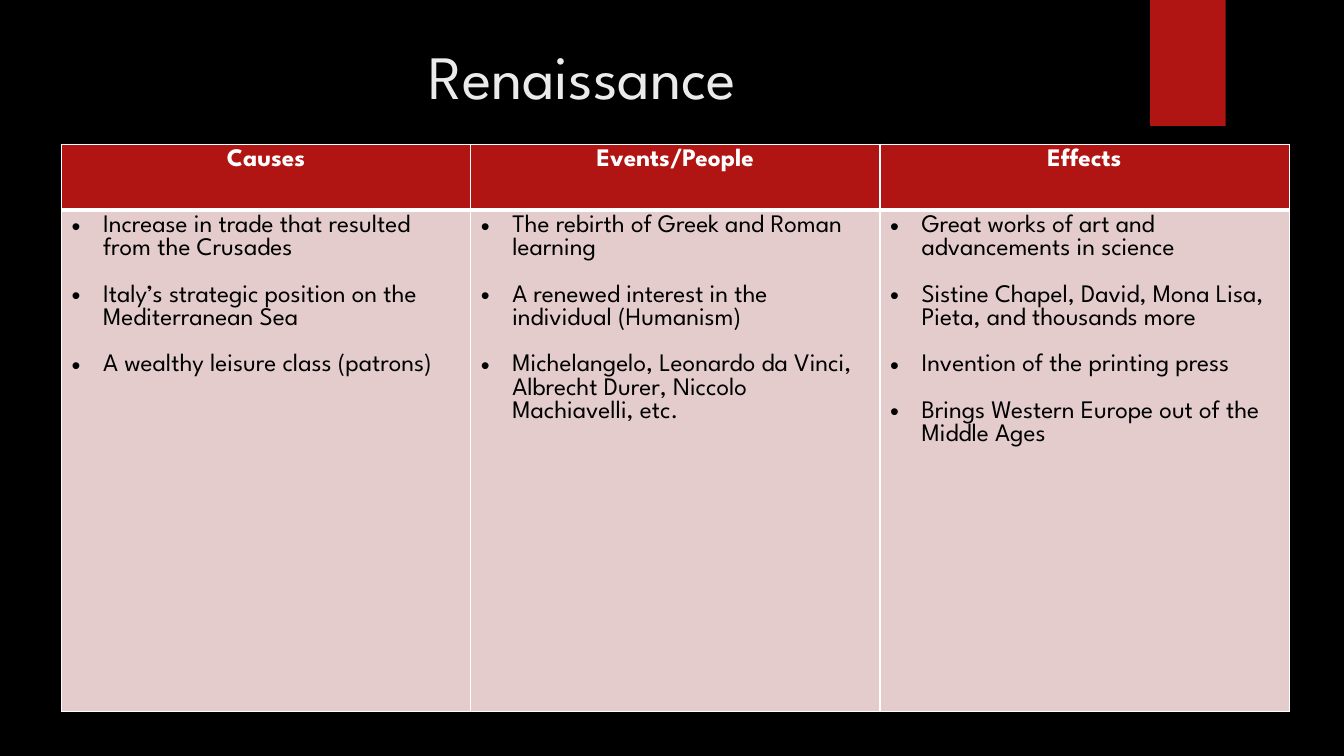
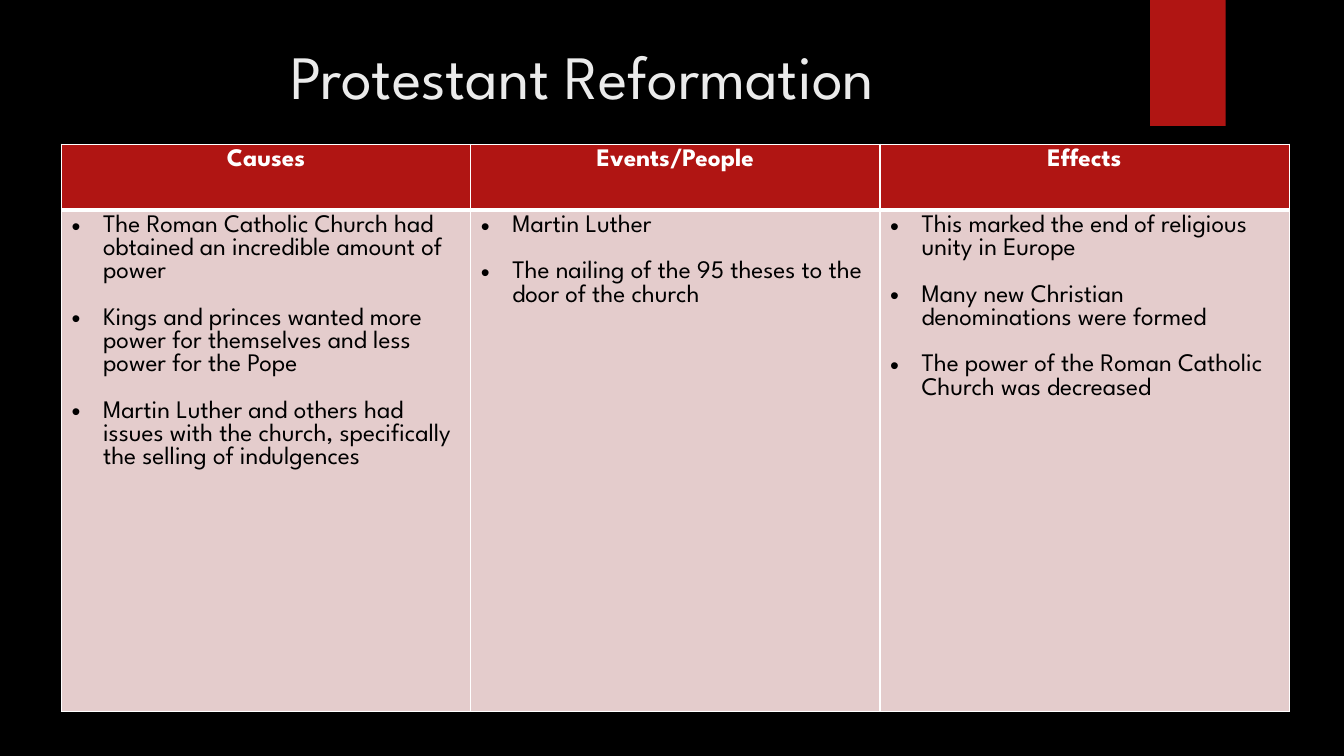
import pptx
import pptx.dml.color
import pptx.enum.shapes
import pptx.enum.text
import pptx.oxml
import pptx.oxml.ns
import pptx.util

Pt = pptx.util.Pt
ALIGN = pptx.enum.text.PP_ALIGN
FONT = "League Spartan"
BLACK, RED, PINK, WHITE, PALE = "000000", "B01513", "E4CCCC", "FFFFFF", "EBEBEB"
HEADINGS = ["Causes", "Events/People", "Effects"]
TABLE_LEFT, TABLE_TOP, TABLE_WIDTH = 43.9, 103, 877
ROW_HEIGHTS = [46.8, 358.6]
BULLET_INDENT = 22.5
BULLET_GAP = 16.6

SLIDES = [
    ("Renaissance ", [
        ["Increase in trade that resulted from the Crusades",
         "Italy’s strategic position on the Mediterranean Sea",
         "A wealthy leisure class (patrons)"],
        ["The rebirth of Greek and Roman learning",
         "A renewed interest in the individual (Humanism)",
         "Michelangelo, Leonardo da Vinci, Albrecht Durer, Niccolo Machiavelli, etc."],
        ["Great works of art and advancements in science",
         "Sistine Chapel, David, Mona Lisa, Pieta, and thousands more",
         "Invention of the printing press",
         "Brings Western Europe out of the Middle Ages"],
    ]),
    ("Protestant Reformation ", [
        ["The Roman Catholic Church had obtained an incredible amount of power",
         "Kings and princes wanted more power for themselves and less power for the Pope",
         "Martin Luther and others had issues with the church, "
         "specifically the selling of indulgences"],
        ["Martin Luther",
         "The nailing of the 95 theses to the door of the church"],
        ["This marked the end of religious unity in Europe",
         "Many new Christian denominations were formed",
         "The power of the Roman Catholic Church was decreased"],
    ]),
]


def rgb(color):
    """Turn a hex string into a colour."""
    return pptx.dml.color.RGBColor.from_string(color)


def paint(fill, color):
    """Give a fill one solid colour."""
    fill.solid()
    fill.fore_color.rgb = rgb(color)


def add_run(p, text, size, color, bold=False):
    """Add a styled run to a paragraph."""
    r = p.add_run()
    r.text = text
    r.font.name = FONT
    r.font.size = Pt(size)
    r.font.bold = bold
    r.font.color.rgb = rgb(color)


def add_band(s):
    """Add the red band at the top of the slide."""
    sp = s.shapes.add_shape(pptx.enum.shapes.MSO_SHAPE.RECTANGLE,
                            Pt(821.5), Pt(0), Pt(54), Pt(90))
    sp.shadow.inherit = False
    paint(sp.fill, RED)
    sp.line.fill.background()


def add_title(s, text):
    """Add the centred slide title."""
    tf = s.shapes.add_textbox(Pt(51), Pt(21), Pt(741), Pt(65)).text_frame
    tf.word_wrap = True
    tf.vertical_anchor = pptx.enum.text.MSO_ANCHOR.BOTTOM
    tf.margin_bottom = Pt(6.5)
    p = tf.paragraphs[0]
    p.alignment = ALIGN.CENTER
    add_run(p, text, 44, PALE)


def style_cell(cell, color, top, bottom):
    """Set white borders and the fill of a cell."""
    tcPr = cell._tc.get_or_add_tcPr()
    for side, width in zip("LRTB", (1, 1, top, bottom)):
        tcPr.append(pptx.oxml.parse_xml(
            f'<a:ln{side} {pptx.oxml.ns.nsdecls("a")} w="{Pt(width)}">'
            f'<a:solidFill><a:srgbClr val="{WHITE}"/></a:solidFill></a:ln{side}>'))
    paint(cell.fill, color)


def add_bullet(p):
    """Give a paragraph a hanging round bullet."""
    pPr = p._p.get_or_add_pPr()
    pPr.set("marL", str(Pt(BULLET_INDENT)))
    pPr.set("indent", str(-Pt(BULLET_INDENT)))
    for tag in ('buFont typeface="Arial"', 'buChar char="•"'):
        pPr.append(pptx.oxml.parse_xml(f'<a:{tag} {pptx.oxml.ns.nsdecls("a")}/>'))


def fill_bullets(tf, items):
    """Write the items as spaced bullets."""
    for i, item in enumerate(items):
        p = tf.add_paragraph() if i else tf.paragraphs[0]
        add_bullet(p)
        if i:
            p.space_before = Pt(BULLET_GAP)
        add_run(p, item, 18, BLACK)


def add_summary_table(s, columns):
    """Add the table of causes, events and effects."""
    table = s.shapes.add_table(2, len(columns), Pt(TABLE_LEFT), Pt(TABLE_TOP),
                               Pt(TABLE_WIDTH), Pt(sum(ROW_HEIGHTS))).table
    table.horz_banding = False
    for row, height in zip(table.rows, ROW_HEIGHTS):
        row.height = Pt(height)
    for i, (heading, items) in enumerate(zip(HEADINGS, columns)):
        table.columns[i].width = Pt(TABLE_WIDTH / len(columns))
        head, body = table.cell(0, i), table.cell(1, i)
        style_cell(head, RED, 1, 3)
        style_cell(body, PINK, 3, 1)
        p = head.text_frame.paragraphs[0]
        p.alignment = ALIGN.CENTER
        add_run(p, heading, 18, WHITE, True)
        fill_bullets(body.text_frame, items)


def main():
    """Build and save the presentation."""
    prs = pptx.Presentation()
    prs.slide_width, prs.slide_height = Pt(960), Pt(540)
    paint(prs.slide_master.background.fill, BLACK)
    for title, columns in SLIDES:
        s = prs.slides.add_slide(prs.slide_layouts[6])
        add_band(s)
        add_title(s, title)
        add_summary_table(s, columns)
    prs.save("out.pptx")


if __name__ == "__main__":
    main()
